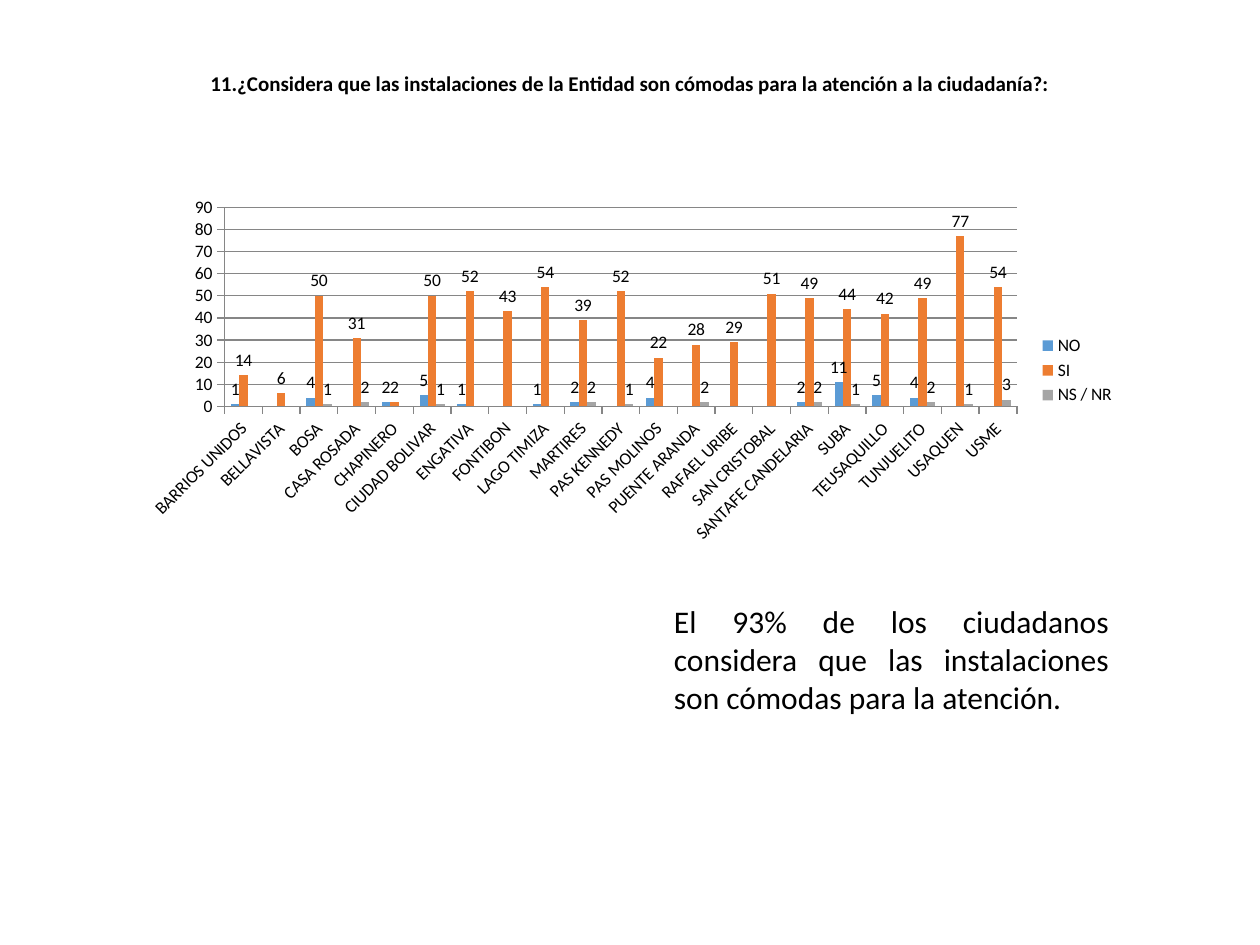
from dataclasses import dataclass

import pptx
import pptx.chart.data
import pptx.dml.color
import pptx.enum.chart
import pptx.enum.text
import pptx.util
from pptx.util import Inches

FONT = "Calibri"
BLACK = "000000"
GRID_GRAY = "868686"


@dataclass
class Answer:
    label: str
    color: str
    counts: list[int | None]


@dataclass
class TextBlock:
    text: str
    box: tuple[float, float, float, float]
    size: float
    align: pptx.enum.text.PP_ALIGN
    anchor: pptx.enum.text.MSO_ANCHOR
    bold: bool = False
    line_spacing: float = 1.0


LOCATIONS = [
    "BARRIOS UNIDOS", "BELLAVISTA", "BOSA", "CASA ROSADA", "CHAPINERO",
    "CIUDAD BOLIVAR", "ENGATIVA", "FONTIBON", "LAGO TIMIZA", "MARTIRES",
    "PAS KENNEDY", "PAS MOLINOS", "PUENTE ARANDA", "RAFAEL URIBE",
    "SAN CRISTOBAL", "SANTAFE CANDELARIA", "SUBA", "TEUSAQUILLO",
    "TUNJUELITO", "USAQUEN", "USME",
]
ANSWERS = [
    Answer("NO", "5B9BD5", [1, None, 4, None, 2, 5, 1, None, 1, 2, None, 4, None,
                            None, None, 2, 11, 5, 4, None, None]),
    Answer("SI", "ED7D31", [14, 6, 50, 31, 2, 50, 52, 43, 54, 39, 52, 22, 28,
                            29, 51, 49, 44, 42, 49, 77, 54]),
    Answer("NS / NR", "A5A5A5", [None, None, 1, 2, None, 1, None, None, None, 2, 1,
                                 None, 2, None, None, 2, 1, None, 2, 1, 3]),
]
TEXTS = [
    TextBlock("11.¿Considera que las instalaciones de la Entidad son cómodas "
              "para la atención a la ciudadanía?:",
              (0.69, 0.32, 8.62, 0.71), 12, pptx.enum.text.PP_ALIGN.CENTER,
              pptx.enum.text.MSO_ANCHOR.MIDDLE, bold=True, line_spacing=0.9),
    TextBlock("El 93% de los ciudadanos considera que las instalaciones "
              "son cómodas para la atención.",
              (5.25, 4.73, 3.65, 1.01), 18, pptx.enum.text.PP_ALIGN.JUSTIFY,
              pptx.enum.text.MSO_ANCHOR.TOP),
]


def rgb(value: str) -> pptx.dml.color.RGBColor:
    return pptx.dml.color.RGBColor.from_string(value)


def set_font(font, size: float, bold: bool = False) -> None:
    font.name = FONT
    font.size = pptx.util.Pt(size)
    font.bold = bold
    font.color.rgb = rgb(BLACK)


def add_text(slide, block: TextBlock) -> None:
    frame = slide.shapes.add_textbox(*map(Inches, block.box)).text_frame
    frame.word_wrap = True
    frame.vertical_anchor = block.anchor
    paragraph = frame.paragraphs[0]
    paragraph.text = block.text
    paragraph.alignment = block.align
    paragraph.line_spacing = block.line_spacing
    set_font(paragraph.font, block.size, block.bold)


def style_axis(axis) -> None:
    axis.major_tick_mark = pptx.enum.chart.XL_TICK_MARK.OUTSIDE
    axis.minor_tick_mark = pptx.enum.chart.XL_TICK_MARK.NONE
    axis.format.line.color.rgb = rgb(GRID_GRAY)
    set_font(axis.tick_labels.font, 10)


def add_answer_chart(slide) -> None:
    data = pptx.chart.data.CategoryChartData()
    data.categories = LOCATIONS
    for answer in ANSWERS:
        data.add_series(answer.label, answer.counts)
    chart = slide.shapes.add_chart(
        pptx.enum.chart.XL_CHART_TYPE.COLUMN_CLUSTERED,
        Inches(1.04), Inches(1.51), Inches(7.91), Inches(2.86), data).chart
    chart.has_title = False
    set_font(chart.font, 10)
    chart.has_legend = True
    chart.legend.position = pptx.enum.chart.XL_LEGEND_POSITION.RIGHT
    chart.legend.include_in_layout = False

    plot = chart.plots[0]
    plot.vary_by_categories = False
    plot.gap_width = 150
    plot.overlap = 0
    for series, answer in zip(plot.series, ANSWERS):
        series.format.fill.solid()
        series.format.fill.fore_color.rgb = rgb(answer.color)
        series.invert_if_negative = False
        labels = series.data_labels
        labels.show_value = True
        labels.position = pptx.enum.chart.XL_LABEL_POSITION.OUTSIDE_END
        set_font(labels.font, 10)

    for axis in (chart.category_axis, chart.value_axis):
        style_axis(axis)
    slanted = chart.category_axis.tick_labels.font._element.getparent().getparent()
    slanted.getparent().bodyPr.set("rot", str(-45 * 60000))
    chart.value_axis.minimum_scale = 0
    chart.value_axis.maximum_scale = 90
    chart.value_axis.major_unit = 10
    chart.value_axis.has_major_gridlines = True
    chart.value_axis.major_gridlines.format.line.color.rgb = rgb(GRID_GRAY)


def main() -> None:
    presentation = pptx.Presentation()
    presentation.slide_width = Inches(10)
    presentation.slide_height = Inches(7.5)
    slide = presentation.slides.add_slide(presentation.slide_layouts[6])
    add_answer_chart(slide)
    for block in TEXTS:
        add_text(slide, block)
    presentation.save("out.pptx")


if __name__ == "__main__":
    main()
